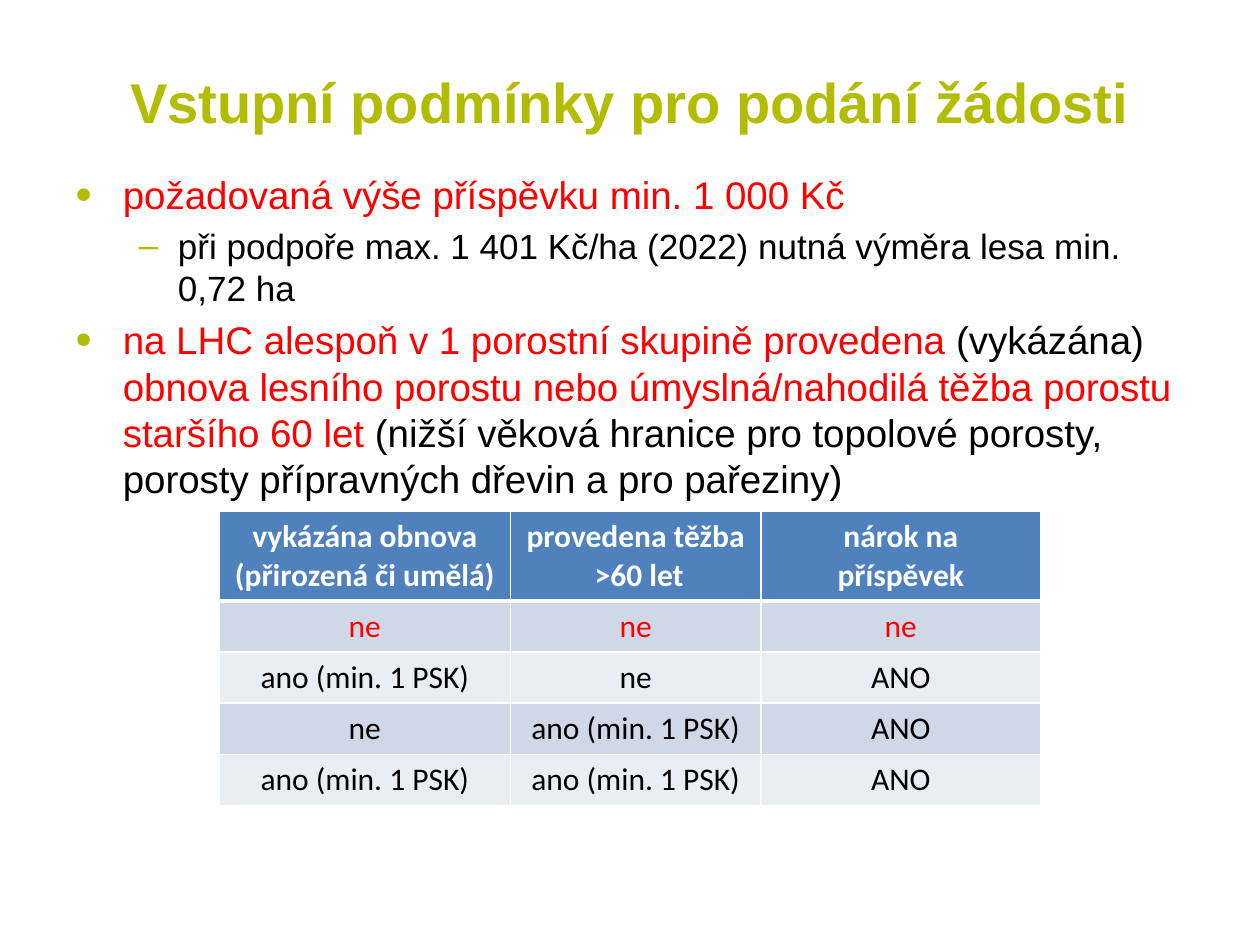
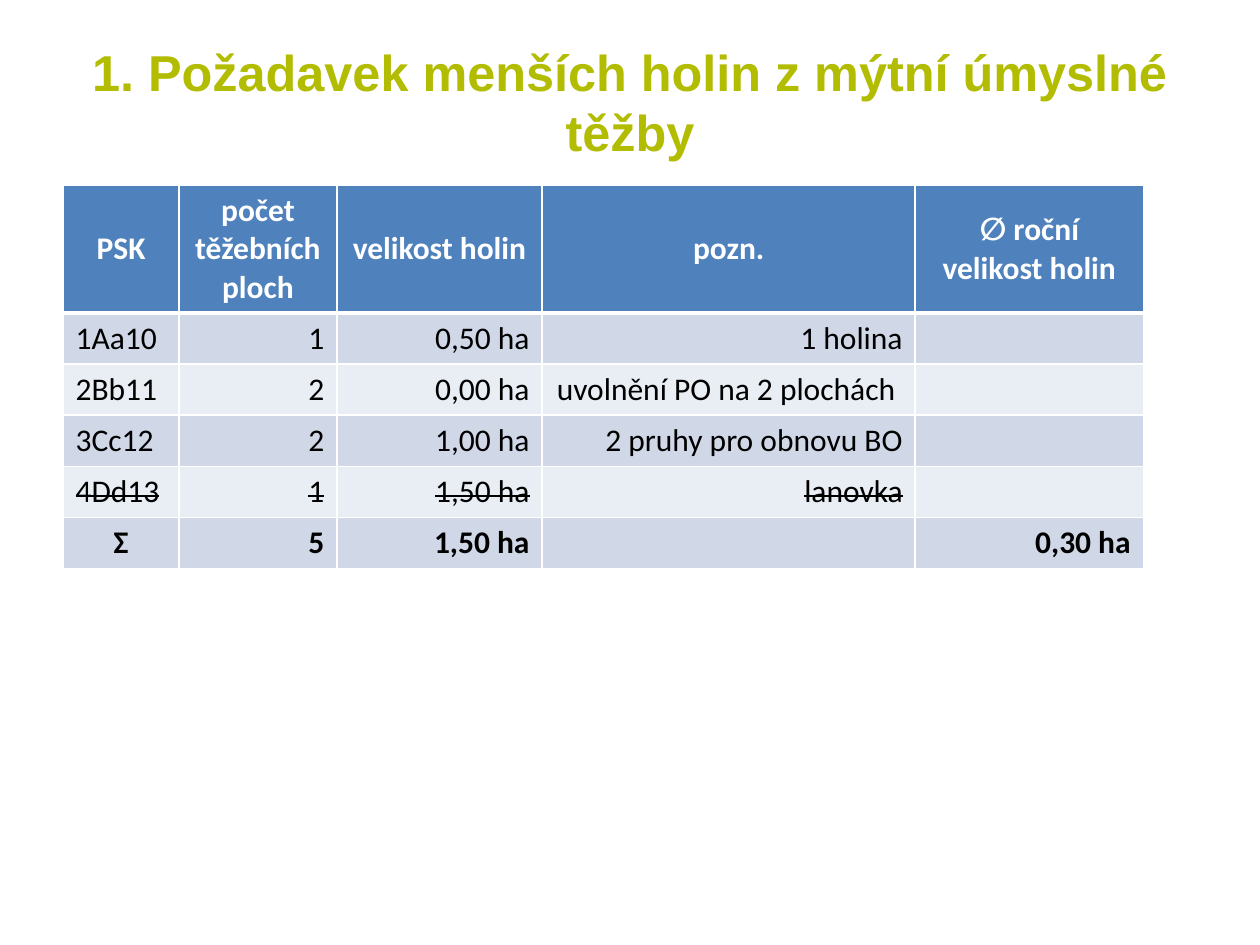
from lxml import etree
from pptx import Presentation
from pptx.dml.color import RGBColor
from pptx.enum.text import MSO_ANCHOR, MSO_AUTO_SIZE, PP_ALIGN
from pptx.oxml.ns import qn
from pptx.util import Cm, Pt

LEFT, CENTER, RIGHT = PP_ALIGN.LEFT, PP_ALIGN.CENTER, PP_ALIGN.RIGHT
MIDDLE = MSO_ANCHOR.MIDDLE
NO_AUTOFIT = MSO_AUTO_SIZE.NONE

GREEN = RGBColor(0xB2, 0xBC, 0x00)
RED = RGBColor(0xFF, 0x00, 0x00)
BLACK = RGBColor(0x00, 0x00, 0x00)
WHITE = RGBColor(0xFF, 0xFF, 0xFF)
HEADER_BLUE = RGBColor(0x4F, 0x81, 0xBD)
BANDS = [RGBColor(0xE9, 0xED, 0xF4), RGBColor(0xD0, 0xD8, 0xE8)]

MARGIN = Cm(1.27)
CONTENT_WIDTH = Cm(22.86)
ROW_HEIGHT = Cm(1.03)

presentation = Presentation()
presentation.slide_width = Cm(25.4)
presentation.slide_height = Cm(19.05)
CONTENT_LAYOUT, TITLE_ONLY_LAYOUT = presentation.slide_layouts[1], presentation.slide_layouts[5]


def add_titled_slide(layout, title_text, title_size):
    slide = presentation.slides.add_slide(layout)
    title = slide.shapes.title
    title.left, title.top, title.width, title.height = MARGIN, Cm(0.76), CONTENT_WIDTH, Cm(2.57)
    title.text_frame.text = title_text
    title.text_frame.auto_size = NO_AUTOFIT
    title.text_frame.vertical_anchor = MIDDLE
    paragraph = title.text_frame.paragraphs[0]
    paragraph.alignment = CENTER
    font = paragraph.font
    font.name, font.size, font.bold = "Arial", Pt(title_size), True
    font.color.rgb = GREEN
    return slide


def add_banded_table(slide, left, top, widths, header_height, rows, alignments):
    height = header_height + ROW_HEIGHT * (len(rows) - 1)
    table = slide.shapes.add_table(len(rows), len(widths), left, top, sum(widths), height).table
    for column, width in zip(table.columns, widths):
        column.width = width
    for row_index, values in enumerate(rows):
        is_header = row_index == 0
        table.rows[row_index].height = header_height if is_header else ROW_HEIGHT
        for column_index, value in enumerate(values):
            cell = table.cell(row_index, column_index)
            cell.text = value
            cell.vertical_anchor = MIDDLE
            for side in ("lnL", "lnR", "lnT", "lnB"):
                thick = (is_header and side == "lnB") or (row_index == 1 and side == "lnT")
                line = etree.SubElement(cell._tc.get_or_add_tcPr(), qn(f"a:{side}"), w=str(Pt(3 if thick else 1)))
                line_fill = etree.SubElement(line, qn("a:solidFill"))
                etree.SubElement(line_fill, qn("a:srgbClr"), val=str(WHITE))
            cell.fill.solid()
            cell.fill.fore_color.rgb = HEADER_BLUE if is_header else BANDS[row_index % 2]
            for paragraph in cell.text_frame.paragraphs:
                paragraph.alignment = CENTER if is_header else alignments[column_index]
                font = paragraph.font
                font.name, font.size, font.bold = "Calibri", Pt(18), is_header
                font.color.rgb = WHITE if is_header else BLACK
    return table


conditions_slide = add_titled_slide(CONTENT_LAYOUT, "Vstupní podmínky pro podání žádosti", 32)

conditions = [
    (0, [("požadovaná výše příspěvku min. 1 000 Kč", RED)]),
    (1, [("při podpoře max. 1 401 Kč/ha (2022) nutná výměra lesa min. 0,72 ha", BLACK)]),
    (0, [
        ("na LHC alespoň v 1 porostní skupině provedena", RED),
        (" (vykázána) ", BLACK),
        ("obnova lesního porostu nebo úmyslná/nahodilá těžba porostu staršího 60 let", RED),
        (" (nižší věková hranice pro topolové porosty, porosty přípravných dřevin a pro pařeziny)", BLACK),
    ]),
]
body = conditions_slide.placeholders[1]
body.left, body.top, body.width, body.height = MARGIN, Cm(3.33), CONTENT_WIDTH, Cm(14.96)
body.text_frame.auto_size = NO_AUTOFIT
for index, (level, parts) in enumerate(conditions):
    paragraph = body.text_frame.add_paragraph() if index else body.text_frame.paragraphs[0]
    paragraph.level = level
    properties = paragraph._p.get_or_add_pPr()
    bullet_color = etree.SubElement(properties, qn("a:buClr"))
    etree.SubElement(bullet_color, qn("a:srgbClr"), val=str(GREEN))
    if level == 0:
        etree.SubElement(properties, qn("a:buSzPct"), val="120000")
    size = 20 if level else 22
    paragraph.space_before = Pt(size * 0.2 if index else 0)
    paragraph.font.name, paragraph.font.size = "Arial", Pt(size)
    for text, color in parts:
        run = paragraph.add_run()
        run.text = text
        run.font.color.rgb = color

YES = "ano (min. 1 PSK)"
claim_rows = [
    ["vykázána obnova\n(přirozená či umělá)", "provedena těžba\n >60 let", "nárok na\npříspěvek"],
    ["ne", "ne", "ne"],
    [YES, "ne", "ANO"],
    ["ne", YES, "ANO"],
    [YES, YES, "ANO"],
]
claim_table = add_banded_table(
    conditions_slide, Cm(4.42), Cm(10.31), [Cm(5.87), Cm(5.05), Cm(5.64)], Cm(1.78), claim_rows, [CENTER] * 3)
for cell in claim_table.rows[1].cells:
    cell.text_frame.paragraphs[0].font.color.rgb = RED

clearings_slide = add_titled_slide(TITLE_ONLY_LAYOUT, "1. Požadavek menších holin z mýtní úmyslné těžby", 28.8)

clearing_rows = [
    ["PSK", "počet\ntěžebních\nploch", "velikost holin", "pozn.", "∅ roční velikost holin"],
    ["1Aa10", "1", "0,50 ha", "1 holina", ""],
    ["2Bb11", "2", "0,00 ha", "uvolnění PO na 2 plochách ", ""],
    ["3Cc12", "2", "1,00 ha", "2 pruhy pro obnovu BO", ""],
    ["4Dd13", "1", "1,50 ha", "lanovka", ""],
    ["Σ", "5", "1,50 ha", "", "0,30 ha"],
]
clearing_widths = [Cm(2.34), Cm(3.18), Cm(4.14), Cm(7.52), Cm(4.6)]
clearing_table = add_banded_table(
    clearings_slide, MARGIN, Cm(3.73), clearing_widths, Cm(2.54), clearing_rows, [LEFT] + [RIGHT] * 4)
for cell in clearing_table.rows[4].cells:
    for run in cell.text_frame.paragraphs[0].runs:
        run._r.get_or_add_rPr().set("strike", "sngStrike")
for cell in clearing_table.rows[5].cells:
    cell.text_frame.paragraphs[0].font.bold = True
clearing_table.cell(5, 0).text_frame.paragraphs[0].alignment = CENTER

presentation.save("out.pptx")
